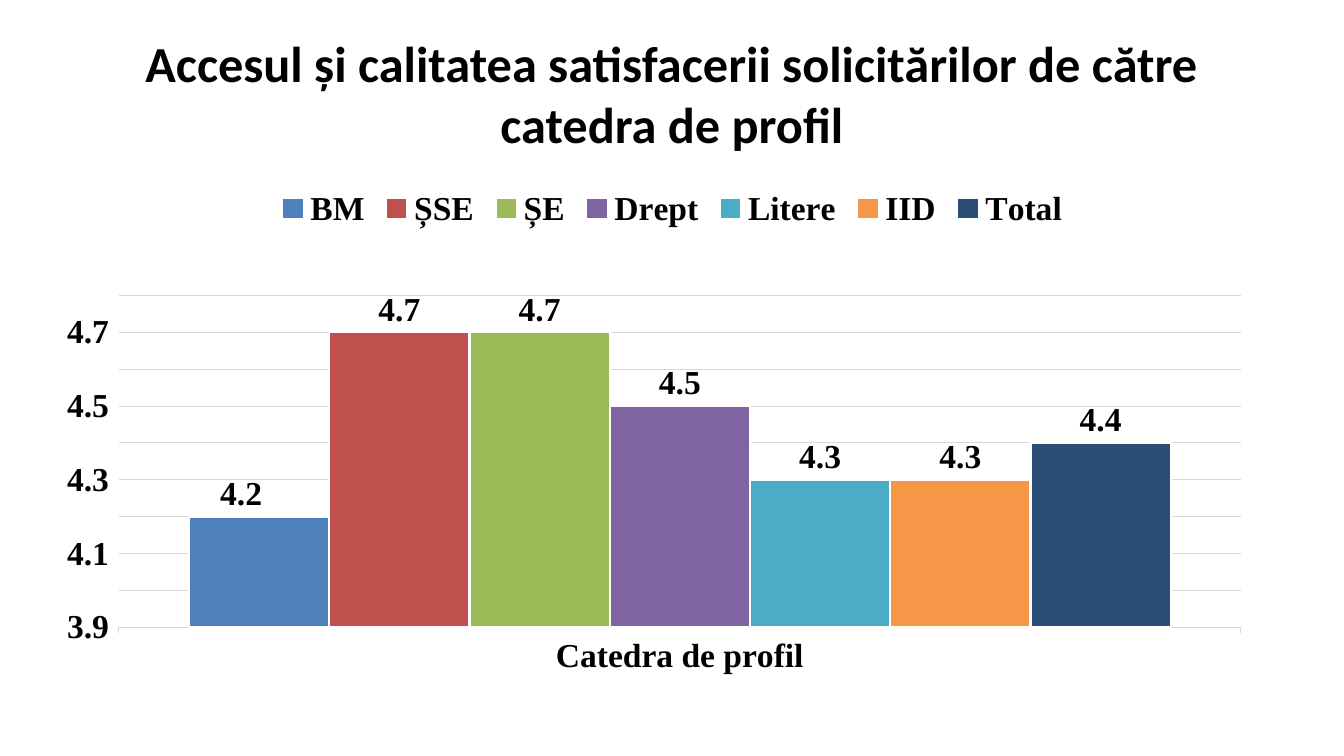
from dataclasses import dataclass
from lxml.etree import SubElement
from pptx import Presentation
from pptx.chart.data import CategoryChartData
from pptx.dml.color import RGBColor
from pptx.enum.chart import XL_CHART_TYPE, XL_LABEL_POSITION, XL_LEGEND_POSITION, XL_TICK_MARK
from pptx.enum.text import MSO_ANCHOR, PP_ALIGN
from pptx.oxml.ns import qn
from pptx.util import Emu, Pt

TITLE = "Accesul și calitatea satisfacerii solicitărilor de către catedra de profil"
CATEGORY = "Catedra de profil"
SCORES = [
    ("BM", 4.2, "4F81BD"),
    ("ȘSE", 4.7, "C0504D"),
    ("ȘE", 4.7, "9BBB59"),
    ("Drept", 4.5, "8064A2"),
    ("Litere", 4.3, "4BACC6"),
    ("IID", 4.3, "F79646"),
    ("Total", 4.4, "2C4D75"),
]
SLIDE_SIZE = (1344, 756)
TITLE_BOX = (67, 30, 1210, 126)
CHART_BOX = (67, 176, 1210, 499)
PLOT_BOX = (118, 296, 1123, 333)
FIRST_LABEL_SHIFT = -18


@dataclass(frozen=True)
class Theme:
    title_font: str = "Calibri"
    chart_font: str = "Times New Roman"
    title_size: int = 36
    chart_size: int = 24
    text: str = "000000"
    grid: str = "D9D9D9"
    bar_edge: str = "FFFFFF"


THEME = Theme()


def px(length):
    return Emu(round(length * 914400 / 100.8))


def format_font(font, name, size):
    font.name = name
    font.size = Pt(size)
    font.bold = True
    font.color.rgb = RGBColor.from_string(THEME.text)


def format_line(line, color, width):
    line.color.rgb = RGBColor.from_string(color)
    line.width = Pt(width)


def write_text(shape, text, font, size, align):
    frame = shape.text_frame
    frame.word_wrap = True
    frame.vertical_anchor = MSO_ANCHOR.MIDDLE
    paragraph = frame.paragraphs[0]
    paragraph.alignment = align
    run = paragraph.add_run()
    run.text = text
    format_font(run.font, font, size)


def set_layout(layout, **settings):
    for old in list(layout):
        layout.remove(old)
    manual = SubElement(layout, qn("c:manualLayout"))
    for name, value in settings.items():
        SubElement(manual, qn(f"c:{name}")).set("val", str(value))


def place_plot(chart):
    area = chart.plots[0]._element.getparent()
    layout = area.find(qn("c:layout"))
    if layout is None:
        layout = SubElement(area, qn("c:layout"))
        area.insert(0, layout)
    left, top, width, height = PLOT_BOX
    chart_left, chart_top, chart_width, chart_height = CHART_BOX
    set_layout(
        layout, layoutTarget="inner", xMode="edge", yMode="edge",
        x=round((left - chart_left) / chart_width, 4),
        y=round((top - chart_top) / chart_height, 4),
        w=round(width / chart_width, 4),
        h=round(height / chart_height, 4),
    )


def shift_label(series, distance):
    label = series.points[0].data_label
    format_font(label.font, THEME.chart_font, THEME.chart_size)
    label.position = XL_LABEL_POSITION.OUTSIDE_END
    element = series._element.find(f"{qn('c:dLbls')}/{qn('c:dLbl')}")
    layout = SubElement(element, qn("c:layout"))
    element.insert(1, layout)
    set_layout(layout, x=round(distance / CHART_BOX[2], 4), y=0)


def format_axes(chart):
    category_axis, value_axis = chart.category_axis, chart.value_axis
    for axis in (category_axis, value_axis):
        axis.major_tick_mark = XL_TICK_MARK.OUTSIDE
        format_font(axis.tick_labels.font, THEME.chart_font, THEME.chart_size)
    format_line(category_axis.format.line, THEME.grid, 0.75)
    value_axis.format.line.fill.background()
    value_axis.has_major_gridlines = True
    format_line(value_axis.major_gridlines.format.line, THEME.grid, 0.75)
    value_axis.minimum_scale = 3.9
    value_axis.maximum_scale = 4.8
    value_axis.major_unit = 0.1


def format_series(series, color):
    series.format.fill.solid()
    series.format.fill.fore_color.rgb = RGBColor.from_string(color)
    format_line(series.format.line, THEME.bar_edge, 1.5)
    labels = series.data_labels
    labels.show_value = True
    labels.position = XL_LABEL_POSITION.OUTSIDE_END
    format_font(labels.font, THEME.chart_font, THEME.chart_size)


def add_score_chart(slide):
    data = CategoryChartData()
    data.categories = [CATEGORY]
    for name, score, _ in SCORES:
        data.add_series(name, [score])
    box = [px(length) for length in CHART_BOX]
    chart = slide.shapes.add_chart(XL_CHART_TYPE.COLUMN_CLUSTERED, *box, data).chart
    format_font(chart.font, THEME.chart_font, THEME.chart_size)
    chart.has_title = False
    chart.has_legend = True
    chart.legend.position = XL_LEGEND_POSITION.TOP
    chart.legend.include_in_layout = False
    format_font(chart.legend.font, THEME.chart_font, THEME.chart_size)
    plot = chart.plots[0]
    plot.gap_width = 100
    plot.overlap = 0
    plot.vary_by_categories = False
    format_axes(chart)
    for series, (_, _, color) in zip(plot.series, SCORES):
        format_series(series, color)
    shift_label(plot.series[0], FIRST_LABEL_SHIFT)
    place_plot(chart)


def main():
    presentation = Presentation()
    presentation.slide_width, presentation.slide_height = map(px, SLIDE_SIZE)
    slide = presentation.slides.add_slide(presentation.slide_layouts[5])
    title = slide.shapes.title
    title.left, title.top, title.width, title.height = map(px, TITLE_BOX)
    write_text(title, TITLE, font=THEME.title_font, size=THEME.title_size, align=PP_ALIGN.CENTER)
    add_score_chart(slide)
    presentation.save("out.pptx")


if __name__ == "__main__":
    main()
